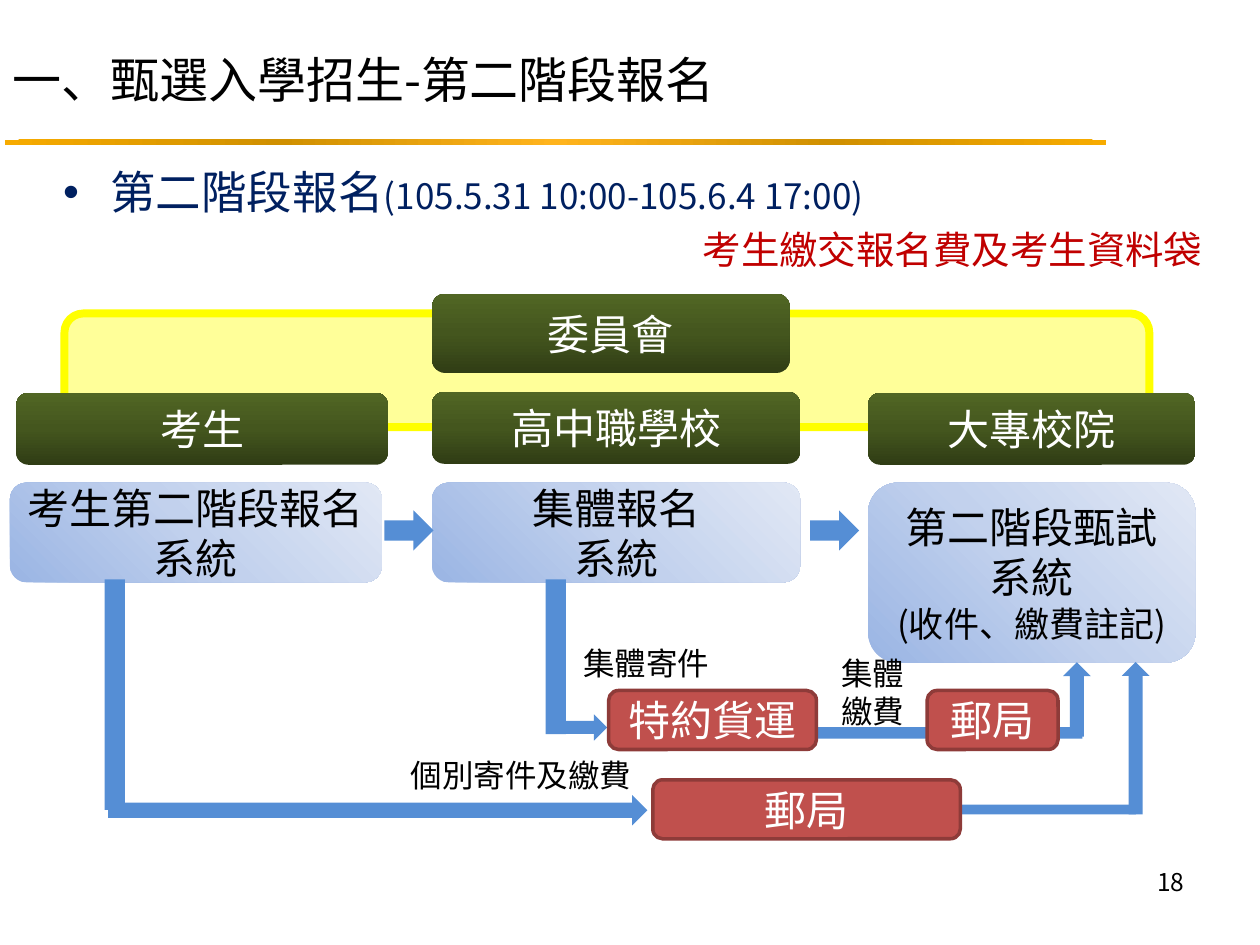
from copy import deepcopy
from dataclasses import dataclass

from lxml import etree
from pptx import Presentation
from pptx.dml.color import RGBColor
from pptx.enum import shapes, text
from pptx.oxml import ns
from pptx.util import Cm, Pt

RECT = shapes.MSO_SHAPE.RECTANGLE
ROUNDED = shapes.MSO_SHAPE.ROUNDED_RECTANGLE
ARROW = shapes.MSO_SHAPE.RIGHT_ARROW
LEFT, CENTER, RIGHT = text.PP_ALIGN.LEFT, text.PP_ALIGN.CENTER, text.PP_ALIGN.RIGHT
MIDDLE = text.MSO_ANCHOR.MIDDLE


@dataclass(frozen=True)
class Theme:
    font: str = "Noto Sans CJK SC"
    black: str = "000000"
    white: str = "FFFFFF"
    navy: str = "002060"
    alert: str = "C00000"
    flow: str = "558ED5"
    frame_fill: str = "FFFF99"
    frame_line: str = "FFFF00"
    carrier_fill: str = "C0504D"
    carrier_line: str = "8E3B39"
    gold: tuple = ("FFB41D", "D09000", "F7AB00")
    role: tuple = ("303D15", "44561E", "516624")
    system: tuple = ("9AB5E4", "C2D1ED", "E1E8F5")
    title_size: int = 28
    heading_size: int = 26
    box_size: int = 24
    notice_size: int = 22
    detail_size: int = 20
    label_size: int = 18
    number_size: int = 14
    line_height: float = 1.2


THEME = Theme()


def write(paragraph, content, *, size, color=THEME.black, align=LEFT, before=0):
    """Append a run; the first run of a paragraph also sets its layout."""
    if not paragraph.runs:
        paragraph.alignment = align
        paragraph.space_before = Pt(before)
        paragraph.line_spacing = Pt(size * THEME.line_height)
    run = paragraph.add_run()
    run.text = content
    run.font.size = Pt(size)
    run.font.color.rgb = RGBColor.from_string(color)
    run.font.name = THEME.font
    east_asian = etree.SubElement(run.font._element, ns.qn("a:ea"))
    east_asian.set("typeface", THEME.font)


def write_lines(frame, lines, **style):
    """Write one paragraph for each (content, size) pair."""
    for index, (content, size) in enumerate(lines):
        paragraph = frame.add_paragraph() if index else frame.paragraphs[0]
        write(paragraph, content, size=size, **style)


def place(shape, left, top, width, height):
    shape.left, shape.top = Cm(left), Cm(top)
    shape.width, shape.height = Cm(width), Cm(height)


def fill_gradient(shape, colors, angle=None):
    """Spread three colours along an angle, or out from the centre without one."""
    shape.fill.gradient()
    gradient = shape._element.spPr.find(ns.qn("a:gradFill"))
    stop_list = gradient.find(ns.qn("a:gsLst"))
    stop_list.append(deepcopy(stop_list[-1]))
    for stop, color, position in zip(shape.fill.gradient_stops, colors, (0, 0.5, 1)):
        stop.color.rgb = RGBColor.from_string(color)
        stop.position = position
    if angle is not None:
        shape.fill.gradient_angle = angle
        return
    gradient.remove(gradient.find(ns.qn("a:lin")))
    radial = etree.Element(ns.qn("a:path"), path="circle")
    stop_list.addnext(radial)
    etree.SubElement(radial, ns.qn("a:fillToRect"),
                     dict.fromkeys("ltrb", "50000"))


def add_block(slide, kind, box, fill, *, line=None, line_width=0, angle=None, rotation=0):
    block = slide.shapes.add_shape(kind, *map(Cm, box))
    block.shadow.inherit = False
    block.rotation = rotation
    if isinstance(fill, tuple):
        fill_gradient(block, fill, angle)
    else:
        block.fill.solid()
        block.fill.fore_color.rgb = RGBColor.from_string(fill)
    if line:
        block.line.color.rgb = RGBColor.from_string(line)
        block.line.width = Pt(line_width)
    else:
        block.line.fill.background()
    return block


def add_box(slide, box, lines, fill, color=THEME.white, **look):
    frame = add_block(slide, ROUNDED, box, fill, **look).text_frame
    frame.word_wrap = True
    frame.vertical_anchor = MIDDLE
    write_lines(frame, lines, color=color, align=CENTER)


def add_label(slide, box, *lines, size=THEME.label_size, wrap=False, align=LEFT):
    frame = slide.shapes.add_textbox(*map(Cm, box)).text_frame
    frame.word_wrap = wrap
    write_lines(frame, [(line, size) for line in lines], align=align)


def add_heading(slide):
    title, body = slide.placeholders
    place(title, 0, 0.71, 22.86, 1.75)
    title.text_frame.vertical_anchor = MIDDLE
    title.text_frame.auto_size = text.MSO_AUTO_SIZE.NONE
    write(title.text_frame.paragraphs[0], "一、甄選入學招生-第二階段報名",
          size=THEME.title_size)

    place(body, 1.02, 3.18, 23.47, 2.54)
    body.text_frame.auto_size = text.MSO_AUTO_SIZE.NONE
    period = body.text_frame.paragraphs[0]
    write(period, "第二階段報名", size=THEME.heading_size, color=THEME.navy)
    write(period, "(105.5.31 10:00-105.6.4 17:00)", size=THEME.detail_size,
          color=THEME.navy)
    notice = body.text_frame.add_paragraph()
    etree.SubElement(notice._p.get_or_add_pPr(), ns.qn("a:buNone"))
    write(notice, "考生繳交報名費及考生資料袋", size=THEME.notice_size,
          color=THEME.alert, align=RIGHT, before=4)

    add_block(slide, RECT, (0.1, 2.82, 22.2, 0.1), THEME.gold)


def add_organisation(slide):
    add_block(slide, ROUNDED, (1.3, 6.32, 21.87, 2.29), THEME.frame_fill,
              line=THEME.frame_line, line_width=4.5)
    size = THEME.box_size
    for box, role in (
        ((8.71, 5.92, 7.21, 1.6), "委員會"),
        ((8.71, 7.9, 7.42, 1.45), "高中職學校"),
        ((17.5, 7.92, 6.6, 1.45), "大專校院"),
        ((0.33, 7.92, 7.49, 1.45), "考生"),
    ):
        add_box(slide, box, [(role, size)], THEME.role, angle=90)
    for box, lines in (
        ((0.2, 9.73, 7.5, 2.01), [("考生第二階段報名系統", size)]),
        ((8.71, 9.73, 7.42, 2.01), [("集體報名", size), ("系統", size)]),
        ((17.5, 9.73, 6.6, 3.63),
         [("第二階段甄試系統", size), ("(收件、繳費註記)", THEME.detail_size)]),
    ):
        add_box(slide, box, lines, THEME.system, THEME.black, angle=45)


def add_flow(slide):
    for kind, box, rotation in (
        (ARROW, (7.75, 10.29, 0.99, 0.81), 0),
        (ARROW, (16.33, 10.29, 0.99, 0.81), 0),
        (ARROW, (11.3, 14.4, 0.94, 0.53), 0),
        (RECT, (11, 11.68, 0.41, 3.12), 0),
        (RECT, (16.46, 14.66, 5.36, 0.23), 0),
        (ARROW, (20.96, 13.82, 1.5, 0.56), 270),
        (RECT, (2.11, 11.68, 0.41, 4.65), 0),
        (ARROW, (2.18, 16.03, 10.87, 0.61), 0),
        (RECT, (19.37, 16.22, 3.53, 0.2), 0),
        (ARROW, (21.36, 14.6, 3.07, 0.56), 270),
    ):
        add_block(slide, kind, box, THEME.flow, rotation=rotation)


def add_carriers(slide):
    for left, top, width, carrier in (
        (12.27, 13.92, 4.19, "特約貨運"),
        (13.16, 15.72, 6.2, "郵局"),
        (18.69, 13.92, 2.64, "郵局"),
    ):
        add_box(slide, (left, top, width, 1.19), [(carrier, THEME.box_size)],
                THEME.carrier_fill, line=THEME.carrier_line, line_width=2)
    add_label(slide, (11.51, 12.85, 3.07, 1.02), "集體寄件")
    add_label(slide, (16.71, 13.06, 1.8, 1.8), "集體", "繳費")
    add_label(slide, (8.03, 15.11, 5, 1.02), "個別寄件及繳費")


def main():
    deck = Presentation()
    deck.slide_width, deck.slide_height = Cm(25.4), Cm(19.05)
    slide = deck.slides.add_slide(deck.slide_layouts[1])
    add_heading(slide)
    add_organisation(slide)
    add_flow(slide)
    add_carriers(slide)
    add_label(slide, (18.21, 17.35, 5.92, 1.32), "18", size=THEME.number_size,
              wrap=True, align=RIGHT)
    deck.save("out.pptx")


if __name__ == "__main__":
    main()
